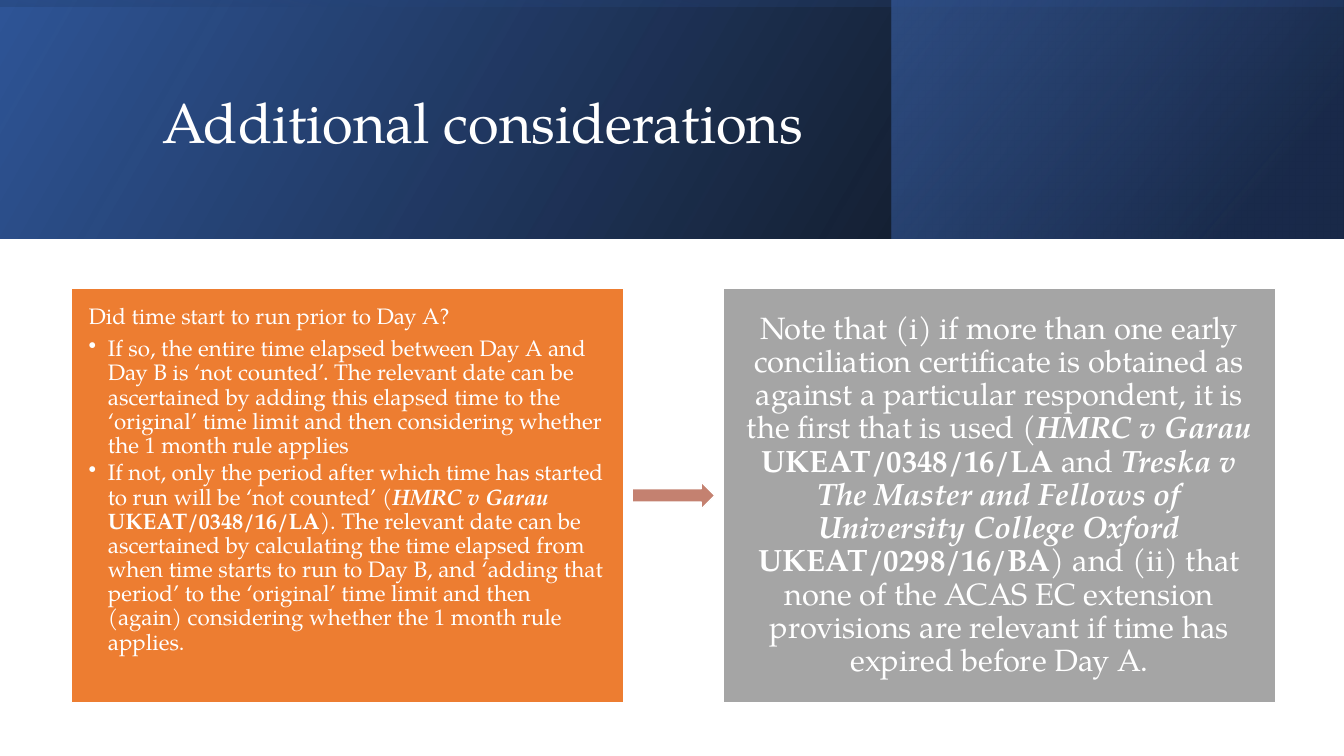
from lxml import etree
from pptx import Presentation
from pptx.dml.color import RGBColor
from pptx.enum.shapes import MSO_SHAPE
from pptx.enum.text import MSO_ANCHOR, MSO_AUTO_SIZE, PP_ALIGN
from pptx.oxml.ns import qn
from pptx.util import Pt

RECTANGLE, RIGHT_ARROW = MSO_SHAPE.RECTANGLE, MSO_SHAPE.RIGHT_ARROW
TOP, MIDDLE = MSO_ANCHOR.TOP, MSO_ANCHOR.MIDDLE
LEFT, CENTER = PP_ALIGN.LEFT, PP_ALIGN.CENTER
NO_AUTO_SIZE = MSO_AUTO_SIZE.NONE

WHITE = RGBColor(0xFF, 0xFF, 0xFF)
BLACK = RGBColor(0x00, 0x00, 0x00)
BLUE = RGBColor(0x44, 0x72, 0xC4)
DEEP_BLUE = RGBColor(0x2F, 0x55, 0x97)
NAVY = RGBColor(0x20, 0x38, 0x64)
ORANGE = RGBColor(0xED, 0x7D, 0x31)
GREY = RGBColor(0xA5, 0xA5, 0xA5)
CLAY = RGBColor(0xC4, 0x81, 0x70)

EMU_PER_PX = 9144  # 100 px to the inch
SLIDE_WIDTH, SLIDE_HEIGHT = 1333, 750
BANNER_HEIGHT = 237
BOX_TOP, BOX_WIDTH, BOX_HEIGHT = 286, 548, 411
BOX_LEFT, BOX_STEP = 71, 646
ARROW_WIDTH, ARROW_HEIGHT = 82, 27

PLAIN, BOLD, BOLD_ITALIC = (False, False), (True, False), (True, True)

QUESTION = [("Did time start to run prior to Day A?", PLAIN)]
IF_SO = [("If so, the entire time elapsed between Day A and Day B is ‘not counted’. "
          "The relevant date can be ascertained by adding this elapsed time to the "
          "‘original’ time limit and then considering whether the 1 month rule applies", PLAIN)]
IF_NOT = [
    ("If not, only the period after which time has started to run will be ‘not counted’ (", PLAIN),
    ("HMRC v Garau", BOLD_ITALIC),
    (" UKEAT/0348/16/LA", BOLD),
    ("). The relevant date can be ascertained by calculating the time elapsed from when time "
     "starts to run to Day B, and ‘adding that period’ to the ‘original’ time limit and then "
     "(again) considering whether the 1 month rule applies.", PLAIN),
]
NOTE = [
    ("Note that (i) if more than one early conciliation certificate is obtained as against a "
     "particular respondent, it is the first that is used (", PLAIN),
    ("HMRC v Garau ", BOLD_ITALIC),
    ("UKEAT/0348/16/LA ", BOLD),
    ("and ", PLAIN),
    ("Treska v The Master and Fellows of University College Oxford ", BOLD_ITALIC),
    ("UKEAT/0298/16/BA", BOLD),
    (") and (ii) that none of the ACAS EC extension provisions are relevant if time has "
     "expired before Day A.", PLAIN),
]


def px(length):
    return length * EMU_PER_PX


class SlideBuilder:
    def __init__(self, slide, font_name, text_color):
        self.slide = slide
        self.font_name = font_name
        self.text_color = text_color

    def style_run(self, run, size, emphasis=PLAIN):
        run.font.name = self.font_name
        run.font.size = Pt(size)
        run.font.color.rgb = self.text_color
        run.font.bold, run.font.italic = emphasis

    def shape(self, kind, left, top, width, height):
        shape = self.slide.shapes.add_shape(kind, px(left), px(top), px(width), px(height))
        shape.shadow.inherit = False
        return shape

    def solid(self, kind, left, top, width, height, color):
        """Add a filled shape with a thin white outline."""
        shape = self.shape(kind, left, top, width, height)
        shape.fill.solid()
        shape.fill.fore_color.rgb = color
        shape.line.color.rgb = WHITE
        shape.line.width = Pt(1)
        return shape

    def gradient(self, left, top, width, height, angle, stops, rotation=0):
        """Add a mirrored gradient panel; stops are (percent, color, opacity percent)."""
        shape = self.shape(RECTANGLE, left, top, width, height)
        shape.rotation = rotation
        shape.line.fill.background()
        shape.fill.gradient()
        shape.fill.gradient_angle = 360 - angle
        for stop, (position, color, opacity) in zip(shape.fill.gradient_stops, stops):
            stop.position = position / 100
            stop.color.rgb = color
        properties = shape._element.spPr
        for color_element, (_, _, opacity) in zip(properties.iter(qn("a:srgbClr")), stops):
            if opacity < 100:
                etree.SubElement(color_element, qn("a:alpha"), val=str(opacity * 1000))
        properties.find(qn("a:xfrm")).set("flipH", "1")

    def title(self, text, left, top, width, height, size):
        title = self.slide.shapes.title
        title.left, title.top = px(left), px(top)
        title.width, title.height = px(width), px(height)
        frame = title.text_frame
        frame.text = text
        frame.auto_size = NO_AUTO_SIZE
        frame.vertical_anchor = MIDDLE
        paragraph = frame.paragraphs[0]
        paragraph.alignment = LEFT
        paragraph.line_spacing = 0.9
        self.style_run(paragraph.runs[0], size)
        self.slide.shapes._spTree.append(title._element)  # bring in front of the banner

    def text_box(self, left, color, paragraphs, size, alignment, anchor):
        """Add a text panel; paragraphs after the first are bulleted."""
        box = self.solid(RECTANGLE, left, BOX_TOP, BOX_WIDTH, BOX_HEIGHT, color)
        frame = box.text_frame
        frame.word_wrap = True
        frame.vertical_anchor = anchor
        frame.margin_left = frame.margin_right = px(17)
        frame.margin_top = frame.margin_bottom = px(17)
        for index, runs in enumerate(paragraphs):
            paragraph = frame.add_paragraph() if index else frame.paragraphs[0]
            paragraph.alignment = alignment
            paragraph.line_spacing = 0.9
            paragraph.space_after = Pt(size * (0.15 if index else 0.35))
            for text, emphasis in runs:
                run = paragraph.add_run()
                run.text = text
                self.style_run(run, size, emphasis)
            if index:
                self.bullet(paragraph)

    def bullet(self, paragraph):
        properties = paragraph._p.get_or_add_pPr()
        properties.set("lvl", "1")
        properties.set("marL", str(px(19)))
        properties.set("indent", str(-px(19)))
        etree.SubElement(properties, qn("a:buChar"), char="•")


def main():
    presentation = Presentation()
    presentation.slide_width, presentation.slide_height = px(SLIDE_WIDTH), px(SLIDE_HEIGHT)
    title_only = presentation.slide_layouts[5]
    builder = SlideBuilder(presentation.slides.add_slide(title_only), "TeX Gyre Pagella", WHITE)

    builder.gradient(0, 0, SLIDE_WIDTH, BANNER_HEIGHT, 330,
                     [(0, BLACK, 96), (100, DEEP_BLUE, 100)])
    builder.gradient(884, 0, 448, BANNER_HEIGHT, 320, [(19, NAVY, 68), (100, BLUE, 48)])
    # Upright panel that a quarter turn lays over the banner
    offset = (SLIDE_WIDTH - BANNER_HEIGHT) // 2
    builder.gradient(offset, -offset, BANNER_HEIGHT, SLIDE_WIDTH, 350,
                     [(23, DEEP_BLUE, 16), (99, BLACK, 45)], rotation=270)
    builder.title("Additional considerations", 151, 38, 1063, 172, 40)

    builder.text_box(BOX_LEFT, ORANGE, [QUESTION, IF_SO, IF_NOT], 16, LEFT, TOP)
    gap_center = BOX_LEFT + (BOX_WIDTH + BOX_STEP) // 2
    builder.solid(RIGHT_ARROW, gap_center - ARROW_WIDTH // 2,
                  BOX_TOP + (BOX_HEIGHT - ARROW_HEIGHT) // 2, ARROW_WIDTH, ARROW_HEIGHT, CLAY)
    builder.text_box(BOX_LEFT + BOX_STEP, GREY, [NOTE], 22, CENTER, MIDDLE)

    presentation.save("out.pptx")


if __name__ == "__main__":
    main()
